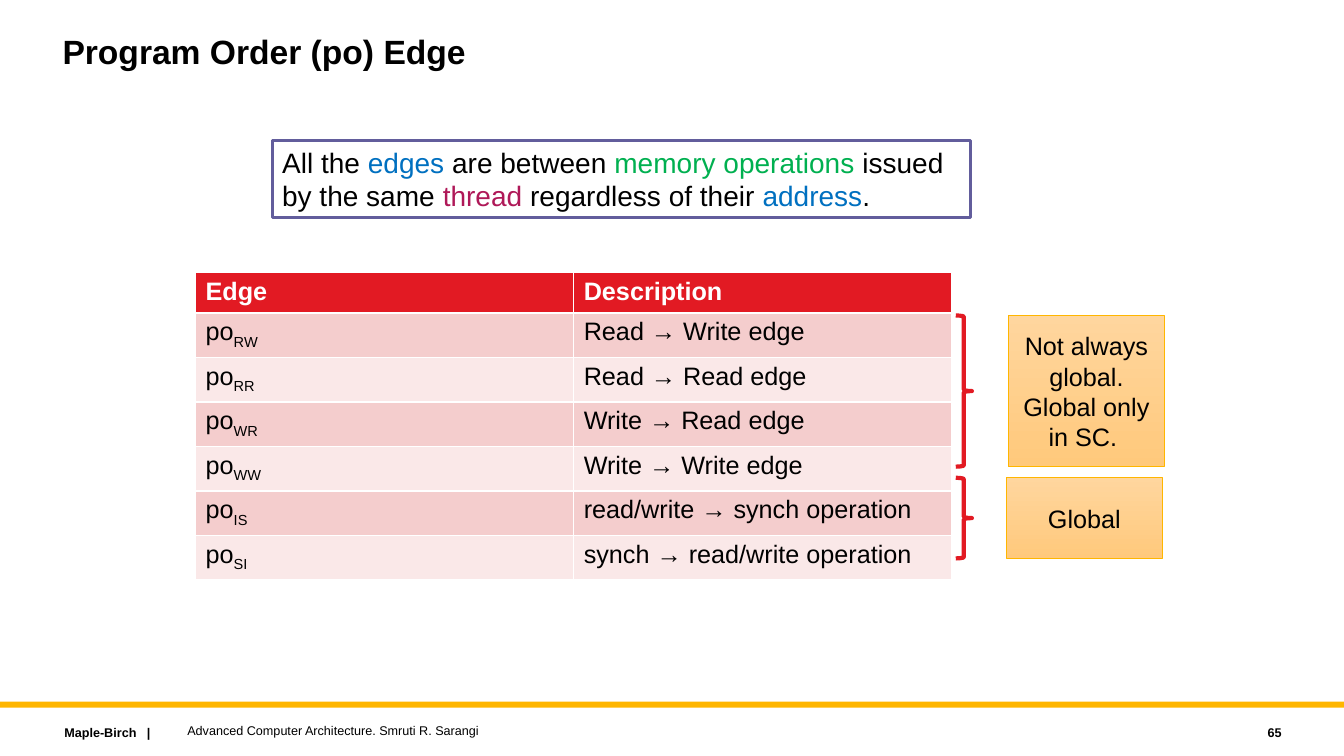
from dataclasses import dataclass

from pptx import Presentation
from pptx.dml.color import RGBColor
from pptx.enum.shapes import MSO_SHAPE
from pptx.enum.text import MSO_ANCHOR, PP_ALIGN
from pptx.util import Inches, Pt


@dataclass(frozen=True)
class Theme:
    font: str = "Arial"
    black: str = "000000"
    white: str = "FFFFFF"
    red: str = "E21A23"
    gold: str = "FFB600"
    purple: str = "625D9C"
    blue: str = "0070C0"
    green: str = "00B050"
    magenta: str = "AF1858"
    bands: tuple = ("F4CDCD", "FAE8E8")
    note_gradient: tuple = ("FFD69E", "FFC97C")
    title: int = 24
    statement: int = 20
    body: int = 18
    footer: int = 9


T = Theme()
rgb = RGBColor.from_string


def add_runs(p, runs, size, bold=False):
    """Append (text, colour) runs to a paragraph and return them."""
    added = []
    for text, color in runs:
        r = p.add_run()
        r.text = text
        r.font.name, r.font.size, r.font.bold = T.font, Pt(size), bold
        r.font.color.rgb = rgb(color)
        added.append(r)
    return added


def add_shape(kind, left, top, width, height, line=None, weight=0):
    """Add an unfilled, shadowless preset shape, outlined if line is given."""
    sp = s.shapes.add_shape(kind, Inches(left), Inches(top), Inches(width), Inches(height))
    sp.shadow.inherit = False
    sp.fill.background()
    if line:
        sp.line.color.rgb = rgb(line)
        sp.line.width = Pt(weight)
    else:
        sp.line.fill.background()
    return sp


prs = Presentation()
prs.slide_width, prs.slide_height = Inches(13.33), Inches(7.5)
s = prs.slides.add_slide(prs.slide_layouts[5])

# Title
title = s.shapes.title
title.left, title.top, title.width, title.height = Inches(0.52), Inches(0.3), Inches(10), Inches(0.9)
tf = title.text_frame
tf.vertical_anchor = MSO_ANCHOR.TOP
p = tf.paragraphs[0]
p.alignment, p.line_spacing = PP_ALIGN.LEFT, 0.9
add_runs(p, [("Program Order (po) Edge", T.black)], T.title, bold=True)

# Footer
rule = add_shape(MSO_SHAPE.RECTANGLE, 0, 6.96, 13.33, 0.06)
rule.fill.solid()
rule.fill.fore_color.rgb = rgb(T.gold)

for text, left, top, width, bold, align in (
    ("Maple-Birch   |", 0.54, 7.14, 2.27, True, PP_ALIGN.LEFT),
    ("Advanced Computer Architecture. Smruti R. Sarangi", 1.76, 7.12, 8, False, PP_ALIGN.LEFT),
    ("65", 11.41, 7.14, 1.4, True, PP_ALIGN.RIGHT),
):
    tf = s.shapes.add_textbox(Inches(left), Inches(top), Inches(width), Inches(0.25)).text_frame
    tf.word_wrap = True
    tf.vertical_anchor = MSO_ANCHOR.MIDDLE
    p = tf.paragraphs[0]
    p.alignment = align
    add_runs(p, [(text, T.black)], T.footer, bold)

# Statement
statement = add_shape(MSO_SHAPE.RECTANGLE, 2.7, 1.39, 6.93, 0.77, T.purple, 2.25)
statement.fill.solid()
statement.fill.fore_color.rgb = rgb(T.white)
tf = statement.text_frame
tf.word_wrap = True
tf.vertical_anchor = MSO_ANCHOR.TOP
statement_lines = (
    [("All the ", T.black), ("edges", T.blue), (" are between ", T.black),
     ("memory operations ", T.green), ("issued", T.black)],
    [("by the same ", T.black), ("thread", T.magenta), (" regardless of their ", T.black),
     ("address", T.blue), (".", T.black)],
)
for i, runs in enumerate(statement_lines):
    p = tf.add_paragraph() if i else tf.paragraphs[0]
    p.alignment = PP_ALIGN.LEFT
    add_runs(p, runs, T.statement)

# Edge table
edges = (
    ("RW", "Read → Write edge"),
    ("RR", "Read → Read edge"),
    ("WR", "Write → Read edge"),
    ("WW", "Write → Write edge"),
    ("IS", "read/write → synch operation"),
    ("SI", "synch → read/write operation"),
)
table = s.shapes.add_table(len(edges) + 1, 2, Inches(1.94), Inches(2.7), Inches(7.5), Inches(2.84)).table
for cell, heading in zip(table.rows[0].cells, ("Edge", "Description")):
    cell.fill.solid()
    cell.fill.fore_color.rgb = rgb(T.red)
    add_runs(cell.text_frame.paragraphs[0], [(heading, T.white)], T.body, bold=True)
for row, (subscript, description) in enumerate(edges, 1):
    name_cell, description_cell = table.rows[row].cells
    for cell in (name_cell, description_cell):
        cell.fill.solid()
        cell.fill.fore_color.rgb = rgb(T.bands[(row - 1) % 2])
    p = name_cell.text_frame.paragraphs[0]
    base, sub = add_runs(p, [("po", T.black), (subscript, T.black)], T.body)
    sub.font._element.set("baseline", "-25000")
    add_runs(description_cell.text_frame.paragraphs[0], [(description, T.black)], T.body)

# Braces with their notes
for text, left, top, height in (
    ("Not always global. Global only in SC. ", 10, 3.13, 1.5),
    ("Global", 9.98, 4.74, 0.8),
):
    add_shape(MSO_SHAPE.RIGHT_BRACE, 9.48, top, 0.16, height, T.red, 3)
    note = add_shape(MSO_SHAPE.RECTANGLE, left, top, 1.55, height, T.gold, 0.5)
    note.fill.gradient()
    note.fill.gradient_angle = 270
    for stop, color in zip(note.fill.gradient_stops, T.note_gradient):
        stop.color.rgb = rgb(color)
    tf = note.text_frame
    tf.word_wrap = True
    tf.vertical_anchor = MSO_ANCHOR.MIDDLE
    p = tf.paragraphs[0]
    p.alignment = PP_ALIGN.CENTER
    add_runs(p, [(text, T.black)], T.body)

prs.save("out.pptx")
